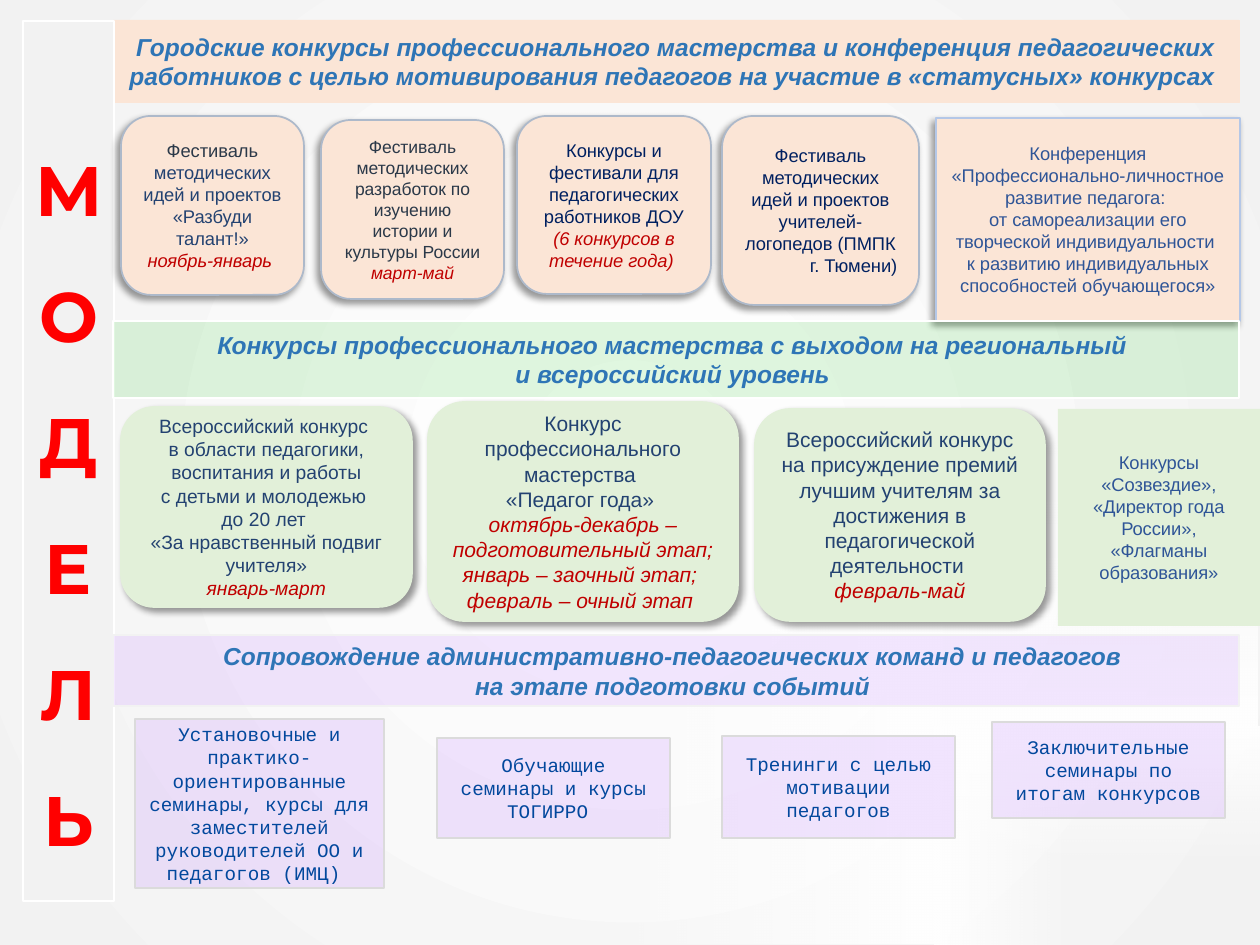
from lxml.etree import SubElement
from pptx import Presentation
from pptx.dml.color import RGBColor
from pptx.enum.shapes import MSO_SHAPE
from pptx.enum.text import MSO_ANCHOR, MSO_AUTO_SIZE, PP_ALIGN
from pptx.oxml.ns import qn
from pptx.util import Emu, Pt

EMU_PER_PX = 914400 / 126

WHITE = RGBColor(0xFF, 0xFF, 0xFF)
LIGHT_GREY = RGBColor(0xF2, 0xF2, 0xF2)
GREY = RGBColor(0xDB, 0xDB, 0xDB)
BLACK = RGBColor(0, 0, 0)
PEACH = RGBColor(0xFB, 0xE5, 0xD6)
PALE_GREEN = RGBColor(0xE2, 0xF0, 0xD9)
GREEN = RGBColor(0x33, 0xCC, 0x33)
VIOLET = RGBColor(0xCC, 0x99, 0xFF)
STEEL = RGBColor(0xAD, 0xB9, 0xCA)
PALE_BLUE = RGBColor(0xB4, 0xC7, 0xE7)
HEADING_BLUE = RGBColor(0x2E, 0x75, 0xB6)
INK = RGBColor(0x23, 0x42, 0x71)
SLATE = RGBColor(0x2B, 0x39, 0x49)
NAVY = RGBColor(0x00, 0x20, 0x60)
BLUE = RGBColor(0x2F, 0x55, 0x97)
COURIER_BLUE = RGBColor(0x02, 0x48, 0x9D)
DARK_RED = RGBColor(0xC0, 0, 0)
RED = RGBColor(0xFF, 0, 0)

ROUND = MSO_SHAPE.ROUNDED_RECTANGLE
PROCESS = MSO_SHAPE.FLOWCHART_ALTERNATE_PROCESS
RECTANGLE = MSO_SHAPE.RECTANGLE

DATE = {"color": DARK_RED, "italic": True}
HEADING = {"name": "Arial", "size": 14, "color": HEADING_BLUE, "bold": True, "italic": True}
LETTER = {"name": "Montserrat", "size": 40, "color": RED, "bold": True}
SUPPORT = {"name": "Courier New", "size": 11, "color": COURIER_BLUE}

TITLE = ("Городские конкурсы профессионального мастерства и конференция педагогических "
         "работников с целью мотивирования педагогов на участие в «статусных» конкурсах ")
REGIONAL = ["Конкурсы профессионального мастерства с выходом на региональный ",
            "и всероссийский уровень "]
TEAM_SUPPORT = ["Сопровождение административно-педагогических команд и педагогов ",
                "на этапе подготовки событий "]

# Each paragraph is a string or a list of (text, format changes) spans.
CITY_CARDS = [
    (PROCESS, (121, 116, 183, 179), 10.5, INK,
     [[("Фестиваль", {"color": SLATE}), (" методических идей и проектов «Разбуди талант!»", {})],
      [("ноябрь-январь ", DATE)]]),
    (PROCESS, (321, 120, 183, 179), 10, SLATE,
     ["Фестиваль методических разработок по изучению истории и культуры России",
      [("март-май", DATE)]]),
    (ROUND, (517, 116, 194, 178), 10.5, NAVY,
     [[("Конкурсы и фестивали для педагогических работников ДОУ ", {}),
       ("(6 конкурсов в течение года) ", DATE)]]),
    (ROUND, (722, 116, 197, 189), 10.5, NAVY,
     ["Фестиваль методических идей и проектов учителей-логопедов (ПМПК", "г. Тюмени)"]),
    (RECTANGLE, (936, 118, 304, 203), 10.5, BLUE,
     ["Конференция «Профессионально-личностное развитие педагога: ",
      "от самореализации его творческой индивидуальности ",
      "к развитию индивидуальных способностей обучающегося»"]),
]
NATIONAL_CARDS = [
    (ROUND, (121, 407, 291, 200), 11, INK,
     ["Всероссийский конкурс ", "в области педагогики, воспитания и работы",
      "с детьми и молодежью ", "до 20 лет ", "«За нравственный подвиг учителя»",
      [("январь-март", DATE)]]),
    (PROCESS, (428, 402, 310, 219), 12, INK,
     ["Конкурс профессионального мастерства ", "«Педагог года» ",
      [("октябрь-декабрь – подготовительный этап; ", DATE)],
      [("январь – заочный этап; ", DATE)], [("февраль – очный этап ", DATE)]]),
    (PROCESS, (755, 409, 290, 212), 12, INK,
     ["Всероссийский конкурс на присуждение премий лучшим учителям за достижения "
      "в педагогической деятельности ", [("февраль-май", DATE)]]),
]
OTHER_CONTESTS = ["Конкурсы «Созвездие»,", "«Директор года России», «Флагманы образования»"]
SUPPORT_CARDS = [
    ((135, 719, 249, 169), "Установочные и практико-ориентированные семинары, курсы "
                           "для заместителей руководителей ОО и педагогов (ИМЦ) "),
    ((437, 738, 233, 100), "Обучающие семинары и курсы ТОГИРРО "),
    ((722, 736, 233, 102), "Тренинги с целью мотивации педагогов"),
    ((992, 722, 233, 96), "Заключительные семинары по итогам конкурсов"),
]
GLOWS = [((896, 767, 217, 140), 270), ((935, 727, 325, 140), 0),
         ((932, 387, 325, 341), 180), ((609, 611, 325, 341), 90)]


def px(value):
    return Emu(round(value * EMU_PER_PX))


def set_alpha(color_element, percent):
    SubElement(color_element, qn("a:alpha"), val=str(percent * 1000))


def add_shadow(box, direction):
    effects = box.element.spPr.find(qn("a:effectLst"))
    shadow = SubElement(effects, qn("a:outerShdw"), blurRad=str(Pt(4)), dist=str(Pt(3)),
                        dir=str(direction * 60000), algn="ctr", rotWithShape="0")
    color = SubElement(shadow, qn("a:srgbClr"), val=str(BLACK))
    set_alpha(color, 40)


def paint(box, fill, line, line_width=1, alpha=None):
    box.fill.solid()
    box.fill.fore_color.rgb = fill
    if alpha is not None:
        set_alpha(box.element.spPr.find(qn("a:solidFill"))[0], alpha)
    box.line.color.rgb = line
    box.line.width = Pt(line_width)


def write(box, paragraphs, style):
    frame = box.text_frame
    frame.word_wrap = True
    frame.auto_size = MSO_AUTO_SIZE.NONE
    frame.vertical_anchor = MSO_ANCHOR.MIDDLE
    for index, spans in enumerate(paragraphs):
        para = frame.add_paragraph() if index else frame.paragraphs[0]
        para.alignment = PP_ALIGN.CENTER
        for text, changes in [(spans, {})] if isinstance(spans, str) else spans:
            span = para.add_run()
            span.text = text
            values = {**style, **changes}
            span.font.color.rgb = values.pop("color")
            values["size"] = Pt(values["size"])
            for name, value in values.items():
                setattr(span.font, name, value)


def add_box(page, kind, place, paragraphs, style, **look):
    box = page.shapes.add_shape(kind, *map(px, place))
    box.shadow.inherit = False
    paint(box, **look)
    write(box, paragraphs, style)
    return box


def add_cards(page, cards, fill, line, direction):
    """Add shadowed cards and return them in order."""
    boxes = []
    for kind, place, size, color, paragraphs in cards:
        style = {"name": "Arial", "size": size, "color": color}
        box = add_box(page, kind, place, paragraphs, style, fill=fill, line=line)
        add_shadow(box, direction)
        boxes.append(box)
    return boxes


def add_background(page):
    """Shade the page from a white centre and lay soft white glows over it."""
    fill = page.background.fill
    fill.gradient()
    for stop, color in zip(fill.gradient_stops, (WHITE, LIGHT_GREY)):
        stop.color.rgb = color
    gradient = page.element.find(".//" + qn("a:gradFill"))
    gradient.remove(gradient.find(qn("a:lin")))
    circle = SubElement(gradient, qn("a:path"), path="circle")
    SubElement(circle, qn("a:fillToRect"), l="50000", t="50000", r="50000", b="50000")
    for place, rotation in GLOWS:
        glow = page.shapes.add_shape(RECTANGLE, *map(px, place))
        glow.rotation = rotation
        glow.shadow.inherit = False
        glow.line.fill.background()
        glow.fill.gradient()
        glow.fill.gradient_angle = 270
        for stop in glow.fill.gradient_stops:
            stop.color.rgb = WHITE
        set_alpha(glow.element.spPr.findall(".//" + qn("a:srgbClr"))[-1], 0)


def add_title(page):
    title = page.shapes.title
    title.left, title.top, title.width, title.height = map(px, (113, 20, 1126, 83))
    paint(title, PEACH, PEACH, 0.5)
    write(title, [TITLE], HEADING)


def add_letter_column(page):
    column = add_box(page, RECTANGLE, (23, 21, 91, 880), "МОДЕЛЬ", LETTER,
                     fill=LIGHT_GREY, line=WHITE)
    column.text_frame.margin_top = Pt(52)
    for para in column.text_frame.paragraphs[1:]:
        para.space_before = Pt(24)


def main():
    deck = Presentation()
    deck.slide_width, deck.slide_height = px(1260), px(945)
    page = deck.slides.add_slide(deck.slide_layouts[5])
    add_background(page)
    add_letter_column(page)
    add_title(page)

    city_boxes = add_cards(page, CITY_CARDS, PEACH, STEEL, 135)
    city_boxes[3].text_frame.paragraphs[-1].alignment = PP_ALIGN.RIGHT
    city_boxes[4].line.color.rgb = PALE_BLUE

    add_box(page, RECTANGLE, (113, 321, 1126, 77), REGIONAL, HEADING,
            fill=GREEN, alpha=15, line=WHITE)
    add_cards(page, NATIONAL_CARDS, PALE_GREEN, PALE_GREEN, 45)
    add_box(page, RECTANGLE, (1058, 409, 202, 217), OTHER_CONTESTS,
            {"name": "Arial", "size": 10.5, "color": BLUE},
            fill=PALE_GREEN, line=PALE_GREEN, line_width=0.5)

    add_box(page, RECTANGLE, (113, 635, 1126, 71), TEAM_SUPPORT, HEADING,
            fill=VIOLET, alpha=23, line=LIGHT_GREY)
    for place, text in SUPPORT_CARDS:
        add_box(page, RECTANGLE, place, [text], SUPPORT, fill=VIOLET, alpha=25, line=GREY)
    deck.save("out.pptx")


if __name__ == "__main__":
    main()
